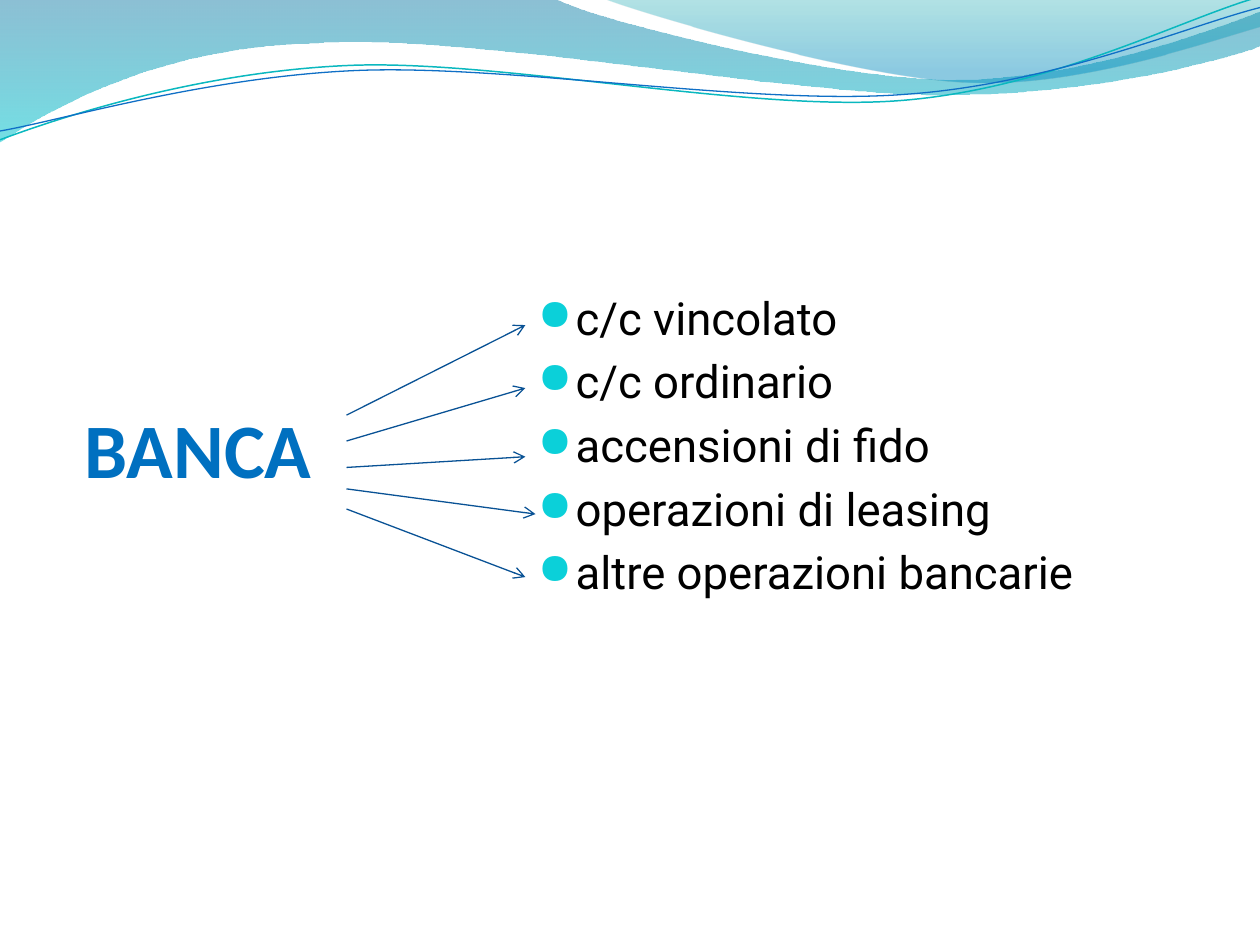
from lxml.etree import SubElement
from pptx import Presentation
from pptx.dml.color import RGBColor
from pptx.enum.shapes import MSO_CONNECTOR
from pptx.enum.text import MSO_ANCHOR as Anchor, PP_ALIGN as Align
from pptx.oxml.ns import qn
from pptx.util import Inches, Pt

LEFT, RIGHT = 1, 3

BANNER = [
    [(0, 0)],
    [(4.4, -0.01)],
    [(4.76, 0.17), (6.64, 0.63), (7.58, 0.63)],
    [(8.53, 0.63), (9.58, 0.26), (10, 0.09)],
    [(10.01, 0.36)],
    [(9.83, 0.44), (8.7, 0.76), (7.46, 0.75)],
    [(6.22, 0.75), (3.82, 0.28), (2.57, 0.34)],
    [(1.29, 0.36), (0.46, 0.83), (-0.01, 1.13)],
    [(0, 0)],
]
CREST = [
    [(4.79, -0.01)],
    [(5.09, 0.11), (6.82, 0.62), (7.69, 0.65)],
    [(8.56, 0.69), (9.61, 0.32), (10, 0.21)],
    [(10, 0)],
    [(4.79, -0.01)],
]
TEAL_WAVE = [
    [(0, 1.11)],
    [(0.48, 0.93), (1.58, 0.57), (2.77, 0.52)],
    [(3.95, 0.47), (5.93, 0.89), (7.13, 0.8)],
    [(8.33, 0.71), (9.38, 0.15), (9.98, -0.02)],
]
BLUE_WAVE = [
    [(0, 1.04)],
    [(0.47, 0.96), (1.64, 0.61), (2.83, 0.56)],
    [(4.03, 0.51), (5.97, 0.84), (7.17, 0.75)],
    [(8.36, 0.67), (9.41, 0.21), (10, 0.06)],
]
SERVICES = [
    "c/c vincolato",
    "c/c ordinario",
    "accensioni di fido",
    "operazioni di leasing",
    "altre operazioni bancarie",
]
ARROWS = [
    ((2.75, 3.29), (4.17, 2.58)),
    ((2.75, 3.5), (4.17, 3.08)),
    ((2.75, 3.71), (4.17, 3.62)),
    ((2.75, 4.04), (4.17, 4.58)),
    ((2.75, 3.88), (4.25, 4.08)),
]


def color(value):
    return RGBColor.from_string(value)


def apply(target, values):
    for name, value in values.items():
        setattr(target, name, value)


def inches(*lengths):
    return [Inches(length) for length in lengths]


def bend(shape, segments):
    lines = iter(list(shape._element.spPr.iter(qn("a:lnTo"))))
    for segment in segments[1:]:
        first, *others = [next(lines) for _ in segment]
        if others:
            curve = first.makeelement(qn("a:cubicBezTo"))
            first.addprevious(curve)
            for line in (first, *others):
                curve.append(line[0])
                line.getparent().remove(line)


class SlideBuilder:
    title_font = {"name": "Calibri", "size": Pt(44), "bold": True}
    title_color = "0070C0"
    body_font = {"name": "Roboto", "size": Pt(26)}
    body_color = "000000"
    bullet_color = "0BD0D9"
    arrow_color = "095295"

    def __init__(self, presentation):
        self.slide = presentation.slides.add_slide(presentation.slide_layouts[5])
        self.shapes = self.slide.shapes

    def outline(self, segments, close):
        start, *points = [inches(*point) for segment in segments for point in segment]
        builder = self.shapes.build_freeform(*start)
        builder.add_line_segments(points, close=close)
        shape = builder.convert_to_shape()
        bend(shape, segments)
        shape.shadow.inherit = False
        return shape

    def band(self, segments, stops):
        shape = self.outline(segments, True)
        shape.line.fill.background()
        shape.fill.gradient()
        shape.fill.gradient_angle = 270
        for stop, (position, value, _) in zip(shape.fill.gradient_stops, stops):
            stop.position = position
            stop.color.rgb = color(value)
        fills = shape._element.spPr.iter(qn("a:srgbClr"))
        for element, (_, _, opacity) in zip(fills, stops):
            SubElement(element, qn("a:alpha"), val=str(opacity * 1000))

    def wave(self, segments, value, width):
        shape = self.outline(segments, False)
        shape.fill.background()
        shape.line.color.rgb = color(value)
        shape.line.width = Pt(width)

    def title(self, text, left, top, width, height):
        shape = self.shapes.title
        apply(shape, dict(zip(("left", "top", "width", "height"),
                              inches(left, top, width, height))))
        frame = shape.text_frame
        apply(frame, {"text": text, "vertical_anchor": Anchor.BOTTOM, "word_wrap": True,
                      "margin_left": 0, "margin_right": 0,
                      "margin_top": Inches(0.05), "margin_bottom": 0})
        paragraph = frame.paragraphs[0]
        paragraph.alignment = Align.LEFT
        font = paragraph.runs[0].font
        apply(font, self.title_font)
        font.color.rgb = color(self.title_color)
        return shape

    def bullets(self, lines, left, top, width, height):
        shape = self.shapes.add_textbox(*inches(left, top, width, height))
        frame = shape.text_frame
        apply(frame, {"text": "\n".join(lines), "word_wrap": True})
        for paragraph in frame.paragraphs:
            paragraph.space_before = Pt(5.2)
            font = paragraph.runs[0].font
            apply(font, self.body_font)
            font.color.rgb = color(self.body_color)
            properties = paragraph._p.get_or_add_pPr()
            properties.set("marL", str(Inches(0.3)))
            properties.set("indent", str(Inches(-0.3)))
            bullet = SubElement(properties, qn("a:buClr"))
            SubElement(bullet, qn("a:srgbClr"), val=self.bullet_color)
            SubElement(properties, qn("a:buSzPct"), val="95000")
            SubElement(properties, qn("a:buFont"), typeface="OpenSymbol")
            SubElement(properties, qn("a:buChar"), char="●")
        return shape

    def arrow(self, start, end):
        connector = self.shapes.add_connector(
            MSO_CONNECTOR.STRAIGHT, *inches(*start, *end))
        connector.line.color.rgb = color(self.arrow_color)
        connector.line.width = Pt(0.75)
        SubElement(connector.line._get_or_add_ln(), qn("a:tailEnd"), type="arrow")
        SubElement(connector._element.spPr, qn("a:effectLst"))
        return connector


def main():
    presentation = Presentation()
    apply(presentation, {"slide_width": Inches(10), "slide_height": Inches(7.5)})
    builder = SlideBuilder(presentation)
    builder.band(BANNER, [(0, "0074A1", 45), (1, "00C6CF", 55)])
    builder.band(CREST, [(0, "00A1A9", 30), (0.8, "008BBF", 45)])
    builder.wave(TEAL_WAVE, "0AB8BF", 0.85)
    builder.wave(BLUE_WAVE, "0F6FC6", 0.75)
    bank = builder.title("BANCA", 0.67, 2.67, 2.08, 1.25)
    services = builder.bullets(SERVICES, 4.17, 2.25, 5.08, 2.75)
    arrows = [builder.arrow(start, end) for start, end in ARROWS]
    arrows[0].begin_connect(bank, RIGHT)
    arrows[2].end_connect(services, LEFT)
    presentation.save("out.pptx")


if __name__ == "__main__":
    main()
